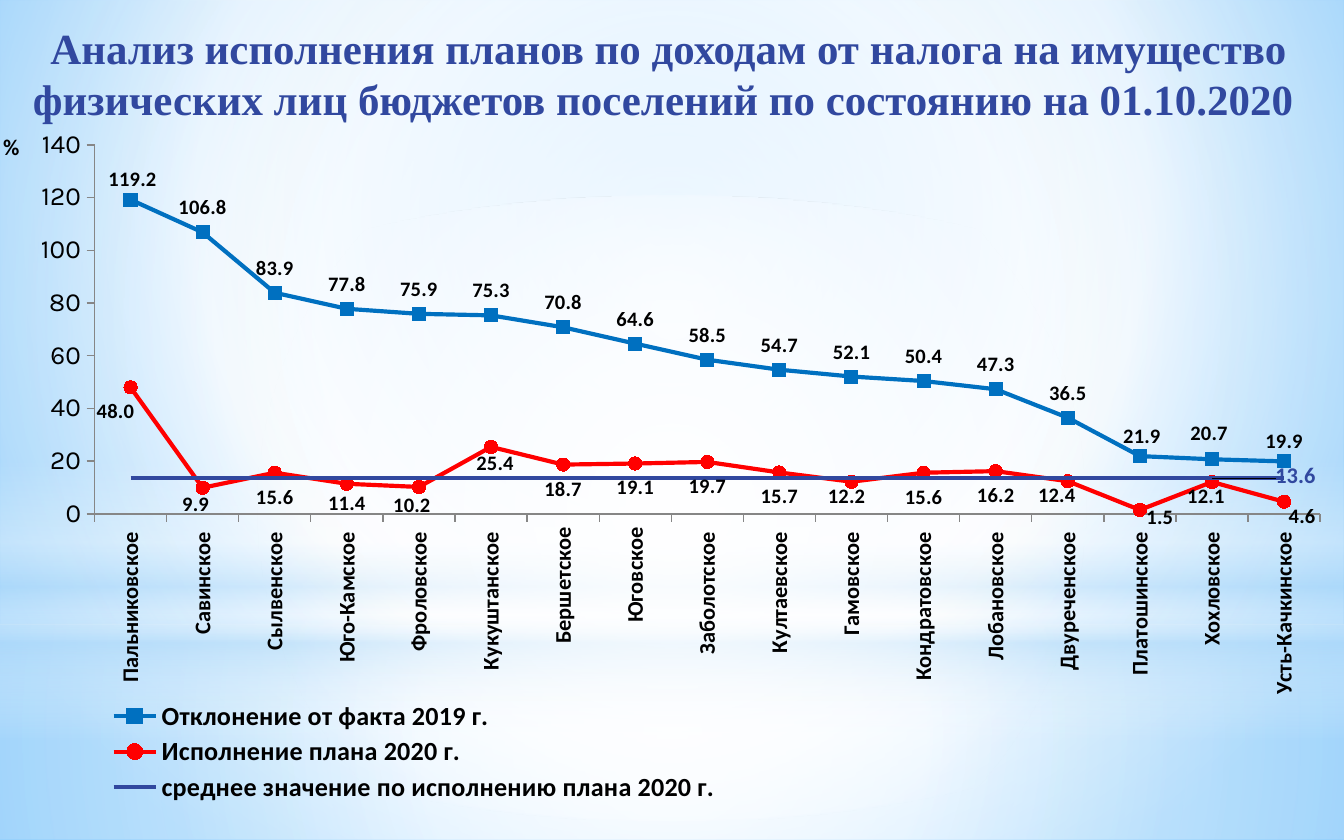
import pptx
import pptx.chart.data
import pptx.dml.color
import pptx.enum.chart
import pptx.enum.shapes
import pptx.enum.text
import pptx.oxml
import pptx.oxml.ns
import pptx.util

SCALE = 914400 / 134.4  # EMU per px
WIDTH, HEIGHT = 1344, 840
CHART_BOX = (-5, 60, 1344, 758)

COLORS = {
    "title": "31489F", "deviation": "0070C0", "execution": "FF0000",
    "average": "31489F", "text": "000000", "axis": "868686",
    "white": "FFFFFF", "pale": "B4DCFA", "sky": "9ED5FF", "blue": "5BB9FF",
}
TITLE = ("Анализ исполнения планов по доходам от налога на имущество "
         "физических лиц бюджетов поселений по состоянию на 01.10.2020 ")
SETTLEMENTS = [
    "Пальниковское ", "Савинское ", "Сылвенское ", "Юго-Камское ", "Фроловское ",
    "Кукуштанское ", "Бершетское", "Юговское", "Заболотское ", "Култаевское ",
    "Гамовское ", "Кондратовское ", "Лобановское ", "Двуреченское ",
    "Платошинское ", "Хохловское ", "Усть-Качкинское ",
]
DEVIATION = [119.2, 106.8, 83.9, 77.8, 75.9, 75.3, 70.8, 64.6, 58.5, 54.7,
             52.1, 50.4, 47.3, 36.5, 21.9, 20.7, 19.9]
EXECUTION = [48, 9.9, 15.6, 11.4, 10.2, 25.4, 18.7, 19.1, 19.7, 15.7,
             12.2, 15.6, 16.2, 12.4, 1.5, 12.1, 4.6]
AVERAGE = 13.6

# Label shifts in px from the usual place: point -> (dx, dy)
DEVIATION_SHIFTS = {0: (2, 4), 14: (2, 5), 15: (-3, -1), 16: (0, 5)}
EXECUTION_SHIFTS = {
    0: (-15, 0), 1: (-7, -8), 3: (0, -5), 4: (-7, -6), 5: (4, -8),
    10: (-5, -10), 13: (-11, -10), 14: (20, -17), 15: (-6, -10), 16: (18, -10),
}
CENTER = (50, 50, 50, 50)
LABEL = pptx.enum.chart.XL_LABEL_POSITION
MARKER = pptx.enum.chart.XL_MARKER_STYLE


def px(value):
    return pptx.util.Emu(round(value * SCALE))


def rgb(name):
    return pptx.dml.color.RGBColor.from_string(COLORS[name])


def set_font(font, size, name="Calibri", bold=True, color="text"):
    font.size = pptx.util.Pt(size)
    font.name = name
    font.bold = bold
    font.color.rgb = rgb(color)


def set_gradient(fill, element, stops, focus=None):
    """Stops are (position, color, opacity); without a focus it runs downwards."""
    fill.gradient()
    old = next(element.iter(pptx.oxml.ns.qn("a:gradFill")))
    stop_xml = "".join(
        f'<a:gs pos="{position * 1000}"><a:srgbClr val="{COLORS[color]}">'
        f'<a:alpha val="{opacity * 1000}"/></a:srgbClr></a:gs>'
        for position, color, opacity in stops)
    if focus:
        left, top, right, bottom = (edge * 1000 for edge in focus)
        path = (f'<a:path path="circle"><a:fillToRect l="{left}" t="{top}" '
                f'r="{right}" b="{bottom}"/></a:path>')
    else:
        path = '<a:lin ang="5400000" scaled="0"/>'
    new = pptx.oxml.parse_xml(
        f'<a:gradFill {pptx.oxml.ns.nsdecls("a")} rotWithShape="1">'
        f'<a:gsLst>{stop_xml}</a:gsLst>{path}</a:gradFill>')
    old.getparent().replace(old, new)


def add_glow(slide, kind, top, height, stops, focus=None):
    shape = slide.shapes.add_shape(kind, 0, px(top), px(WIDTH), px(height))
    shape.shadow.inherit = False
    shape.line.fill.background()
    set_gradient(shape.fill, shape.element, stops, focus)


def add_title(slide):
    box = slide.shapes.add_textbox(0, px(15), px(1339), px(70))
    box.text_frame.word_wrap = True
    paragraph = box.text_frame.paragraphs[0]
    paragraph.text = TITLE
    paragraph.alignment = pptx.enum.text.PP_ALIGN.CENTER
    set_font(paragraph.font, 23, "Times New Roman", color="title")


def place(before, mode="", **fractions):
    """Add a manual chart layout after the given element."""
    for old in before.getparent().findall(pptx.oxml.ns.qn("c:layout")):
        before.getparent().remove(old)
    parts = '<c:layoutTarget val="inner"/>' if mode == "inner" else ""
    if mode:
        parts += '<c:xMode val="edge"/><c:yMode val="edge"/>'
    parts += "".join(f'<c:{key} val="{value}"/>' for key, value in fractions.items())
    layout = pptx.oxml.parse_xml(
        f'<c:layout {pptx.oxml.ns.nsdecls("c")}><c:manualLayout>{parts}'
        '</c:manualLayout></c:layout>')
    before.addnext(layout)
    return layout


def style_series(series, color, marker):
    series.smooth = False
    series.format.line.color.rgb = rgb(color)
    series.format.line.width = pptx.util.Pt(2.25)
    series.marker.style = marker
    if marker != MARKER.NONE:
        series.marker.size = 7
        series.marker.format.fill.solid()
        series.marker.format.fill.fore_color.rgb = rgb(color)
        series.marker.format.line.color.rgb = rgb(color)


def label_series(series, position):
    labels = series.data_labels
    labels.show_value = True
    labels.position = position
    labels.number_format = "#,##0.0"
    labels.number_format_is_linked = False
    set_font(labels.font, 11)


def shift_labels(series, shifts, position, size=11, color="text"):
    for index, (dx, dy) in shifts.items():
        label = series.points[index].data_label
        set_font(label.font, size, color=color)
        label.position = position
        entry = next(item for item in series._element.iter(pptx.oxml.ns.qn("c:dLbl"))
                     if item.idx.val == index)
        layout = place(entry.idx, x=round(dx / CHART_BOX[2], 4),
                       y=round(dy / CHART_BOX[3], 4))
        layout.addnext(pptx.oxml.parse_xml(
            f'<c:numFmt {pptx.oxml.ns.nsdecls("c")} formatCode="#,##0.0" sourceLinked="0"/>'))


def style_axes(chart):
    category, value = chart.category_axis, chart.value_axis
    for axis in (category, value):
        axis.has_major_gridlines = False
        axis.major_tick_mark = pptx.enum.chart.XL_TICK_MARK.OUTSIDE
        axis.format.line.color.rgb = rgb("axis")
    set_font(category.tick_labels.font, 12)
    body = category._element.find(".//" + pptx.oxml.ns.qn("a:bodyPr"))
    body.set("rot", "-5400000")
    body.set("vert", "horz")
    set_font(value.tick_labels.font, 14, "Karla", bold=False)
    value.tick_labels.number_format = "#,##0"
    value.tick_labels.number_format_is_linked = False
    value.minimum_scale, value.maximum_scale, value.major_unit = 0, 140, 20

    # Upright unit sign at the top of the value axis
    frame = value.axis_title.text_frame
    frame.text = "%"
    set_font(frame.paragraphs[0].font, 12)
    title = value.axis_title._element
    body = title.find(".//" + pptx.oxml.ns.qn("a:bodyPr"))
    body.set("rot", "0")
    body.set("vert", "horz")
    place(title.find(pptx.oxml.ns.qn("c:tx")), "edge", x=0.003, y=0.09)


def add_line_chart(slide):
    data = pptx.chart.data.CategoryChartData()
    data.categories = SETTLEMENTS
    data.add_series("Отклонение от факта 2019 г.", DEVIATION)
    data.add_series("Исполнение плана 2020 г.", EXECUTION)
    data.add_series("среднее значение по исполнению плана 2020 г.",
                    [AVERAGE] * len(SETTLEMENTS))
    chart = slide.shapes.add_chart(pptx.enum.chart.XL_CHART_TYPE.LINE_MARKERS,
                                   *map(px, CHART_BOX), data).chart
    chart.has_title = False
    set_font(chart.font, 18, "Karla", bold=False)
    chart.plots[0].vary_by_categories = False
    style_axes(chart)

    deviation, execution, average = chart.plots[0].series
    style_series(deviation, "deviation", MARKER.SQUARE)
    style_series(execution, "execution", MARKER.CIRCLE)
    style_series(average, "average", MARKER.NONE)
    label_series(deviation, LABEL.ABOVE)
    label_series(execution, LABEL.BELOW)
    shift_labels(deviation, DEVIATION_SHIFTS, LABEL.ABOVE)
    shift_labels(execution, EXECUTION_SHIFTS, LABEL.BELOW)
    shift_labels(average, {15: (58, -2)}, LABEL.RIGHT, 12, "average")
    average.data_labels.show_value = False

    chart.has_legend = True
    chart.legend.position = pptx.enum.chart.XL_LEGEND_POSITION.BOTTOM
    chart.legend.include_in_layout = False
    set_font(chart.legend.font, 14)
    place(chart.legend._element.find(pptx.oxml.ns.qn("c:legendPos")), "edge",
          x=0.062, y=0.84, w=0.5, h=0.145)
    plot_area = chart._chartSpace.chart.plotArea
    layout = place(plot_area.find(pptx.oxml.ns.qn("c:lineChart")), "inner",
                   x=0.074, y=0.112, w=0.912, h=0.487)
    plot_area.insert(0, layout)


def main():
    presentation = pptx.Presentation()
    presentation.slide_width, presentation.slide_height = px(WIDTH), px(HEIGHT)
    slide = presentation.slides.add_slide(presentation.slide_layouts[6])

    # Sky background with soft glows
    rectangle = pptx.enum.shapes.MSO_SHAPE.RECTANGLE
    set_gradient(slide.background.fill, slide.element,
                 [(0, "sky", 100), (60, "white", 100), (100, "blue", 100)],
                 (20, 10, 20, 60))
    add_glow(slide, rectangle, 625, 215,
             [(0, "white", 91), (37, "white", 76), (100, "pale", 79)], CENTER)
    add_glow(slide, rectangle, 0, 625,
             [(0, "white", 89), (48, "white", 62), (100, "pale", 79)], CENTER)
    add_glow(slide, rectangle, 461, 280,
             [(0, "white", 0), (29, "white", 30), (45, "pale", 40),
              (55, "white", 26), (65, "pale", 60), (100, "white", 0)])
    add_glow(slide, pptx.enum.shapes.MSO_SHAPE.OVAL, 196, 625,
             [(0, "white", 100), (56, "white", 0)], CENTER)

    add_title(slide)
    add_line_chart(slide)
    presentation.save("out.pptx")


if __name__ == "__main__":
    main()
